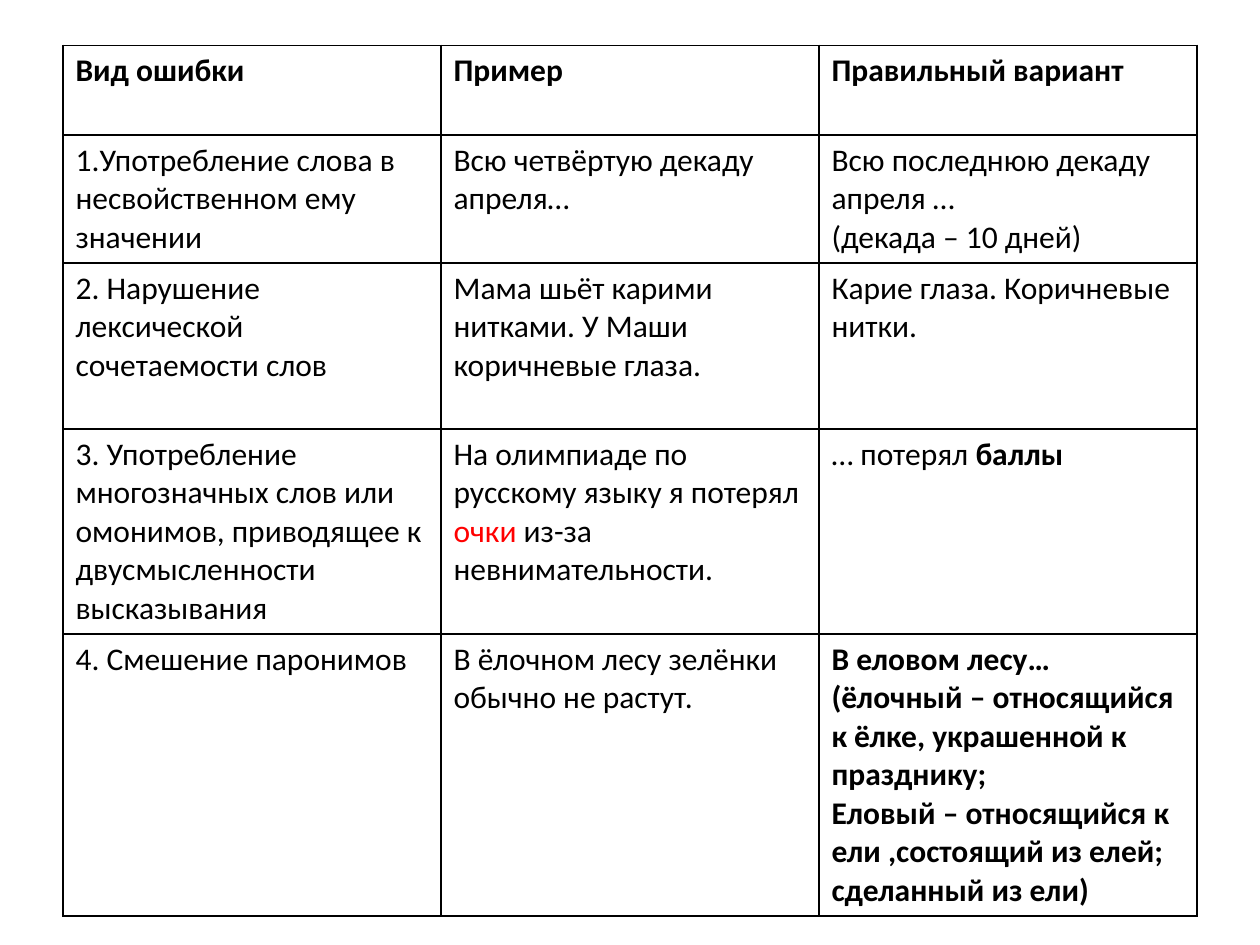
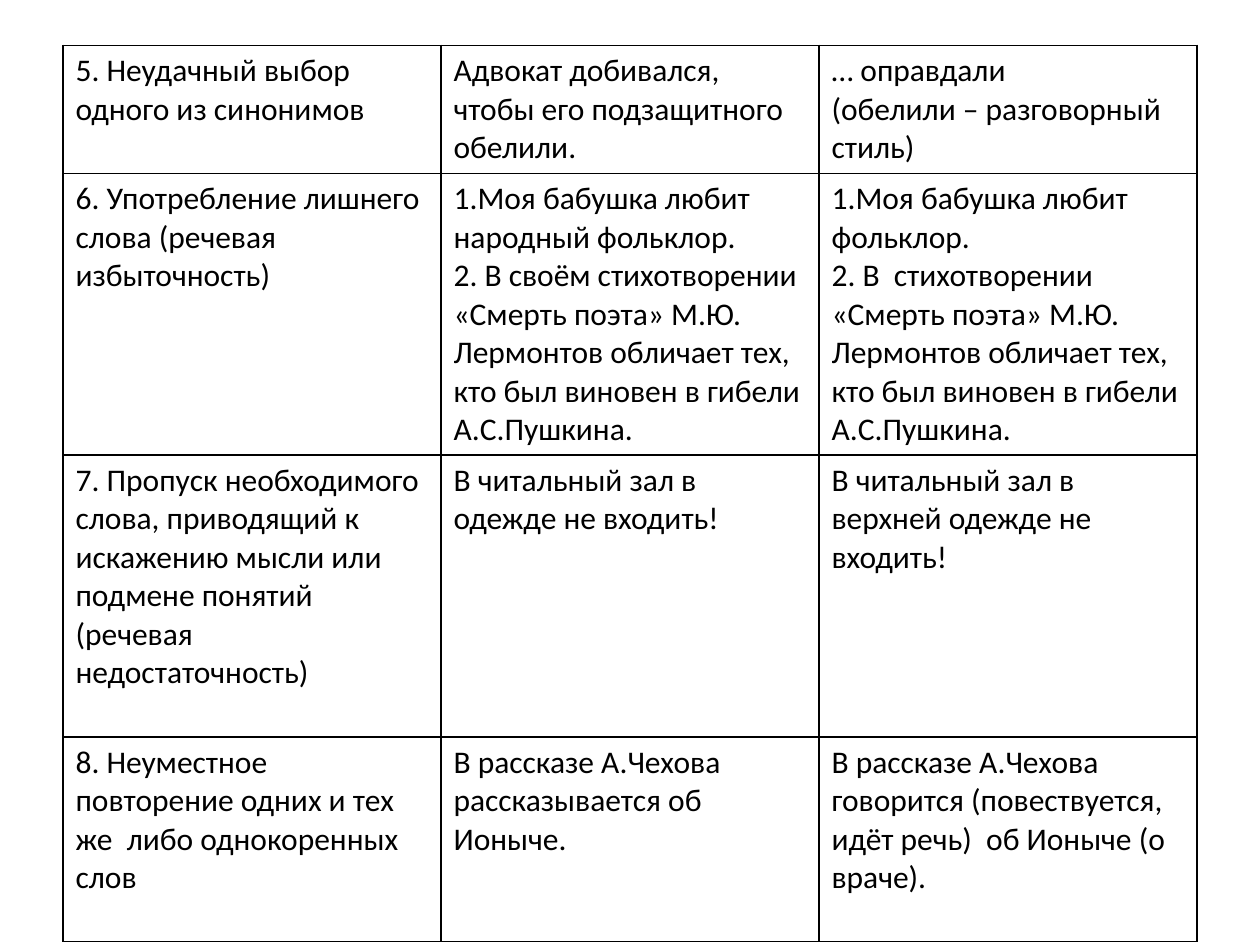
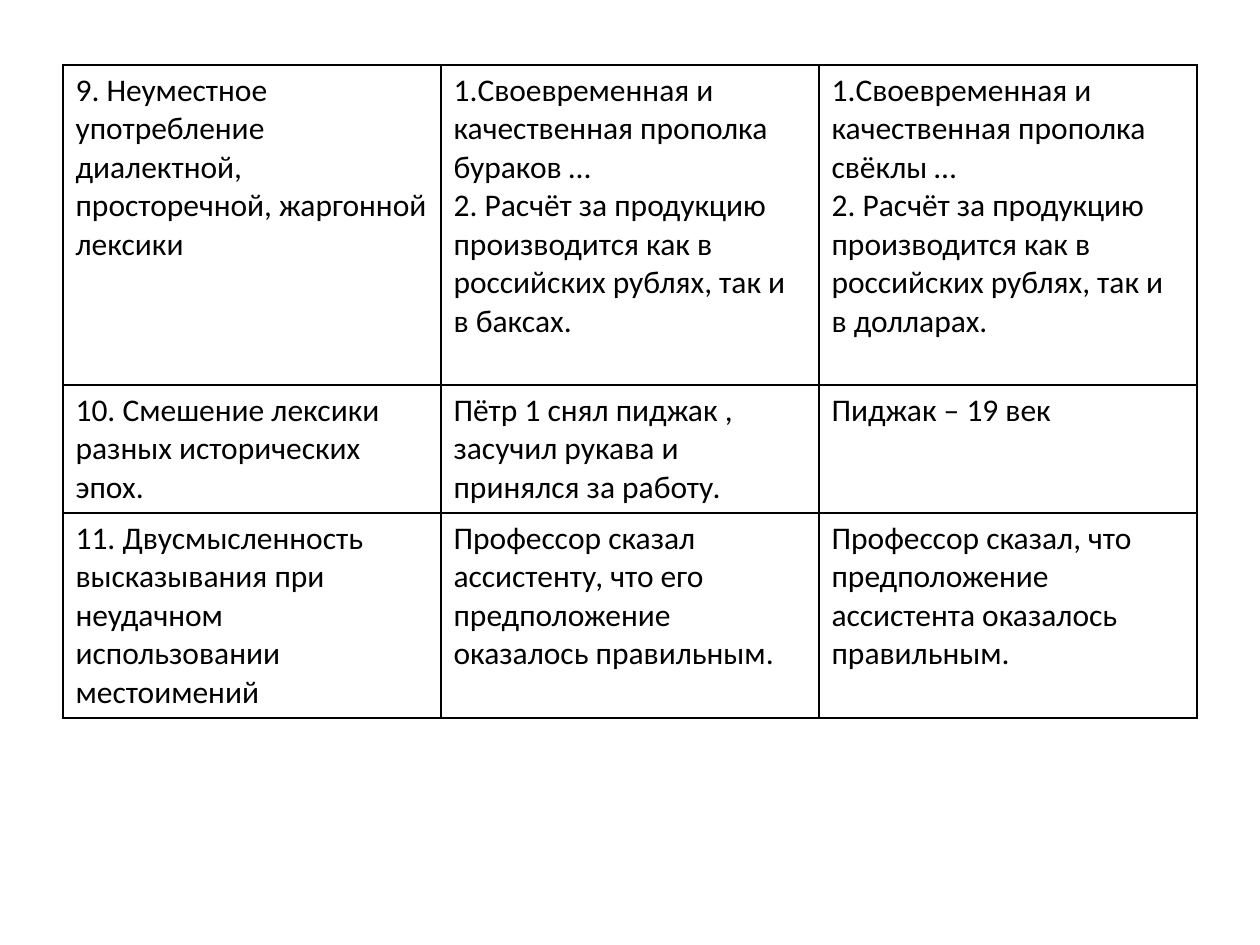
from dataclasses import dataclass

from lxml import etree
from pptx import Presentation
from pptx.dml.color import RGBColor
from pptx.oxml.ns import qn
from pptx.util import Pt

BLANK_LAYOUT = 6
BORDER_SIDES = ("a:lnL", "a:lnR", "a:lnT", "a:lnB")


@dataclass(frozen=True)
class Theme:
    font: str = "Calibri"
    size: float = 18
    ink: str = "000000"
    accent: str = "FF0000"
    border_width: float = 1
    line_height: float = 21.96
    cell_padding: float = 7.2
    table_left: float = 36
    column_width: float = 216


THEME = Theme()


def bold(text):
    return text, {"bold": True}


def accent(text):
    return text, {"color": THEME.accent}


MEANING_ERRORS = [
    (2, [[bold("Вид ошибки")]], [[bold("Пример")]], [[bold("Правильный вариант")]]),
    (3, ["1.Употребление слова в несвойственном ему значении"],
        ["Всю четвёртую декаду апреля…"],
        ["Всю последнюю декаду апреля …", "(декада – 10 дней)"]),
    (4, ["2. Нарушение лексической сочетаемости слов"],
        ["Мама шьёт карими нитками. У Маши коричневые глаза."],
        ["Карие глаза. Коричневые нитки."]),
    (5, ["3. Употребление многозначных слов или омонимов, приводящее к "
         "двусмысленности высказывания"],
        [["На олимпиаде по русскому языку я потерял ", accent("очки"),
          " из-за невнимательности."]],
        [["… потерял ", bold("баллы")]]),
    (7, ["4. Смешение паронимов"],
        ["В ёлочном лесу зелёнки обычно не растут."],
        [[bold("В еловом лесу…")],
         [bold("(ёлочный – относящийся к ёлке, украшенной к празднику;")],
         [bold("Еловый – относящийся к ели ,состоящий из елей; сделанный из ели)")]]),
]

CHOICE_ERRORS = [
    (3, ["5. Неудачный выбор одного из синонимов"],
        ["Адвокат добивался, чтобы его подзащитного обелили."],
        ["… оправдали", "(обелили – разговорный стиль)"]),
    (7, ["6. Употребление лишнего слова (речевая избыточность)"],
        ["1.Моя бабушка любит народный фольклор.",
         "2. В своём стихотворении «Смерть поэта» М.Ю. Лермонтов обличает тех, "
         "кто был виновен в гибели А.С.Пушкина."],
        ["1.Моя бабушка любит фольклор.",
         "2. В  стихотворении «Смерть поэта» М.Ю. Лермонтов обличает тех, "
         "кто был виновен в гибели А.С.Пушкина."]),
    (7, ["7. Пропуск необходимого слова, приводящий к искажению мысли или "
         "подмене понятий (речевая недостаточность)"],
        ["В читальный зал в одежде не входить!"],
        ["В читальный зал в верхней одежде не входить!"]),
    (5, ["8. Неуместное повторение одних и тех же  либо однокоренных слов"],
        ["В рассказе А.Чехова рассказывается об Ионыче."],
        ["В рассказе А.Чехова говорится (повествуется, идёт речь)  "
         "об Ионыче (о враче)."]),
]

STYLE_ERRORS = [
    (8, ["9. Неуместное употребление диалектной, просторечной, жаргонной лексики"],
        ["1.Своевременная и качественная прополка бураков …",
         "2. Расчёт за продукцию производится как в российских рублях, "
         "так и в баксах."],
        ["1.Своевременная и качественная прополка свёклы …",
         "2. Расчёт за продукцию производится как в российских рублях, "
         "так и в долларах."]),
    (3, ["10. Смешение лексики разных исторических эпох."],
        ["Пётр 1 снял пиджак , засучил рукава и принялся за работу."],
        ["Пиджак – 19 век"]),
    (5, ["11. Двусмысленность высказывания при неудачном использовании местоимений"],
        ["Профессор сказал ассистенту, что его предположение оказалось правильным."],
        ["Профессор сказал, что  предположение ассистента оказалось правильным."]),
]


def add_span(para, text, *, bold=False, color=THEME.ink):
    span = para.add_run()
    span.text = text
    span.font.name = THEME.font
    span.font.size = Pt(THEME.size)
    span.font.bold = bold
    span.font.color.rgb = RGBColor.from_string(color)


def fill_cell(cell, paragraphs):
    frame = cell.text_frame
    for index, content in enumerate(paragraphs):
        para = frame.add_paragraph() if index else frame.paragraphs[0]
        for part in [content] if isinstance(content, str) else content:
            text, style = (part, {}) if isinstance(part, str) else part
            add_span(para, text, **style)


def style_cell(cell):
    properties = cell._tc.get_or_add_tcPr()
    for side in BORDER_SIDES:
        line = etree.SubElement(properties, qn(side), w=str(Pt(THEME.border_width)))
        solid = etree.SubElement(line, qn("a:solidFill"))
        etree.SubElement(solid, qn("a:srgbClr"), val=THEME.ink)
    cell.fill.background()


def add_error_table(page, rows, top):
    heights = [lines * THEME.line_height + THEME.cell_padding for lines, *_ in rows]
    columns = len(rows[0]) - 1
    frame = page.shapes.add_table(
        len(rows), columns, Pt(THEME.table_left), Pt(top),
        Pt(columns * THEME.column_width), Pt(sum(heights)))
    table = frame.table
    table.first_row = False
    table.horz_banding = False
    for row, height, (_, *contents) in zip(table.rows, heights, rows):
        row.height = Pt(height)
        for cell, paragraphs in zip(row.cells, contents):
            fill_cell(cell, paragraphs)
            style_cell(cell)


def main():
    deck = Presentation()
    deck.slide_width, deck.slide_height = Pt(720), Pt(540)
    for rows, top in ((MEANING_ERRORS, 26), (CHOICE_ERRORS, 26), (STYLE_ERRORS, 37.25)):
        page = deck.slides.add_slide(deck.slide_layouts[BLANK_LAYOUT])
        add_error_table(page, rows, top)
    deck.save("out.pptx")


if __name__ == "__main__":
    main()
